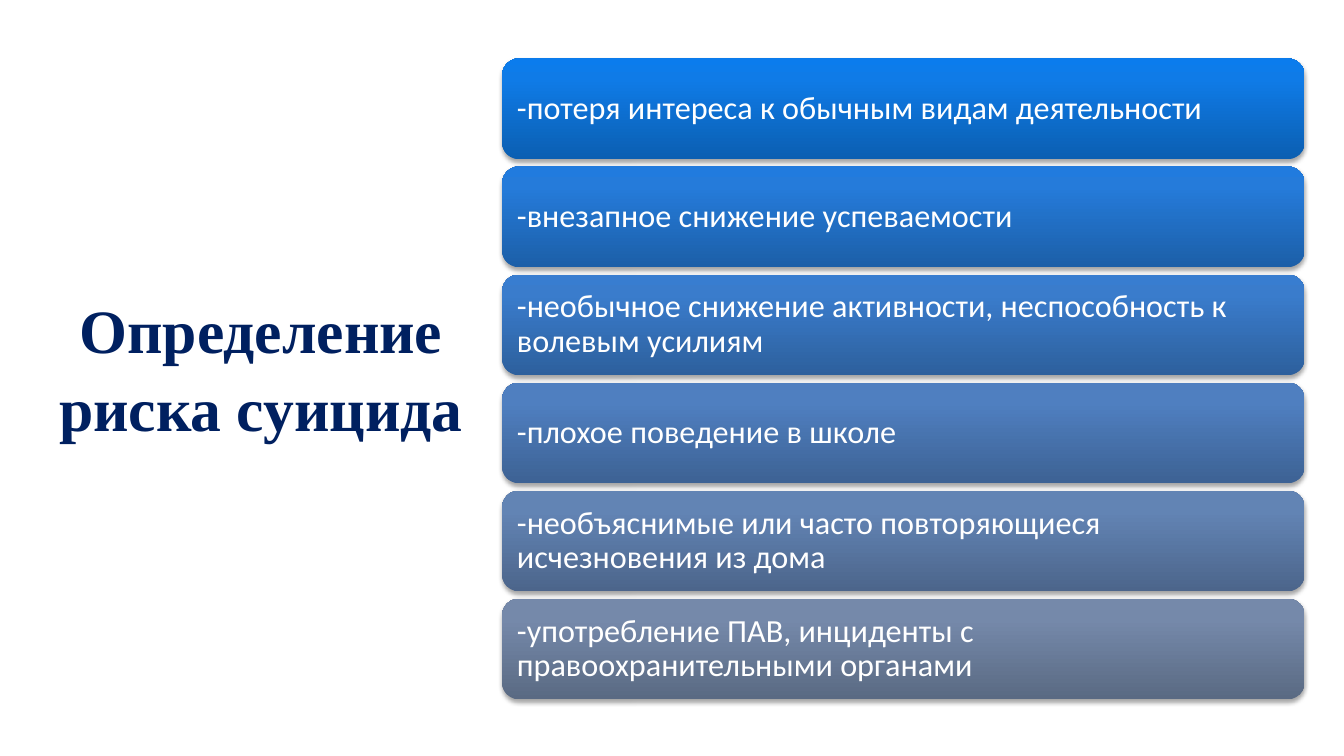
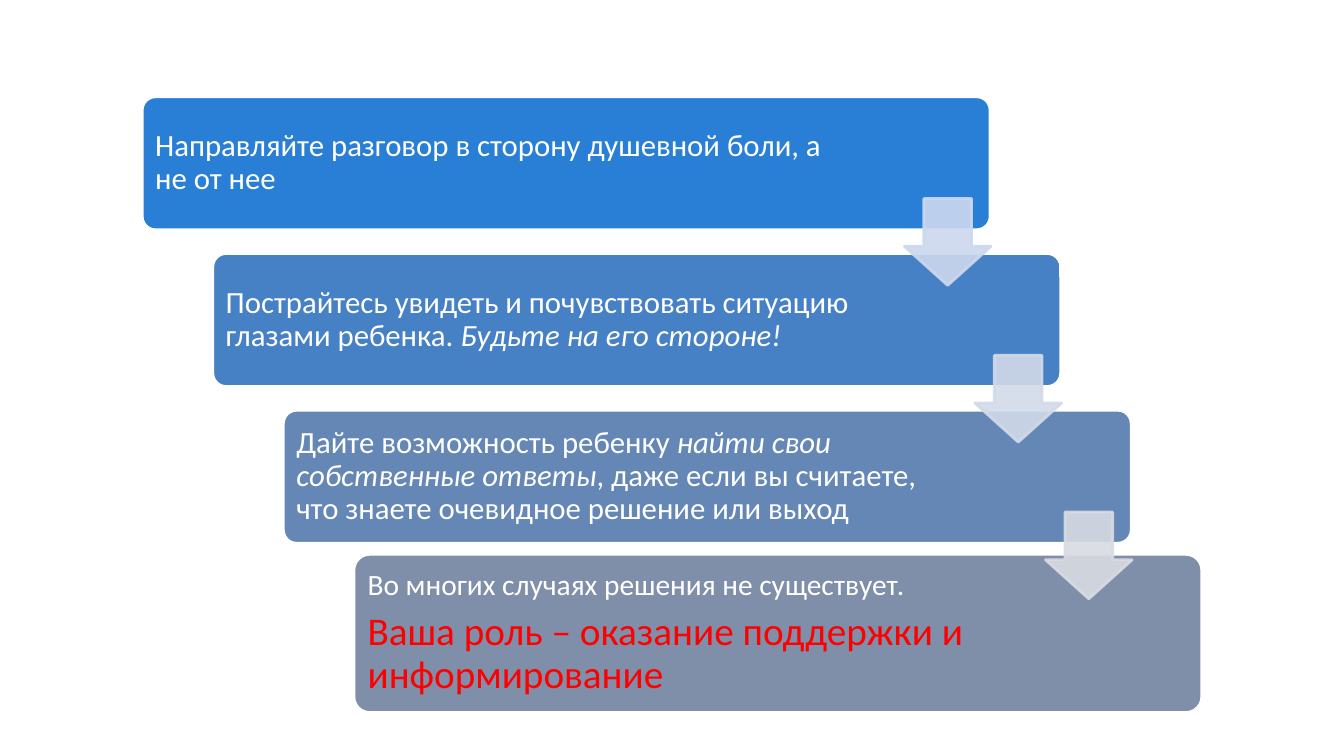
import dataclasses

import pptx
import pptx.dml.color
import pptx.enum.shapes
import pptx.enum.text
import pptx.oxml
import pptx.oxml.ns
import pptx.util

SHAPES = pptx.enum.shapes.MSO_SHAPE
ALIGN = pptx.enum.text.PP_ALIGN
qn = pptx.oxml.ns.qn


@dataclasses.dataclass(frozen=True)
class Theme:
    width: float = 13.33
    height: float = 7.5
    title_font: str = "Times New Roman"
    body_font: str = "Calibri"
    title_color: str = "002060"
    text_color: str = "FFFFFF"
    accent_color: str = "FF0000"
    title_size: int = 44
    sign_size: int = 23
    step_size: int = 22
    remark_size: int = 21
    accent_size: int = 28
    body_spacing: float = 0.9
    title_spacing: float = 1.06
    paragraph_gap: int = 7
    outline: int = 2
    arrow_alpha: int = 90
    sign_gradients: tuple = (
        ("0B5FB2", "0F7BE7", "0B7CED"),
        ("1C5FA8", "257BDA", "217BDE"),
        ("2D609D", "3A7CCC", "387DD0"),
        ("3D6294", "4F7FC0", "4D7FC3"),
        ("4C658B", "6284B4", "6184B7"),
        ("5A6A83", "7589AA", "748AAC"),
    )
    step_fills: tuple = ("297FD5", "4781C5", "6487B6", "7F8FA9")
    arrow_fills: tuple = ("CDD8EF", "D2DAE9", "D8DBE2")


def rgb(code):
    return pptx.dml.color.RGBColor.from_string(code)


def element(tag, parent, **attributes):
    """Append a DrawingML element and return it."""
    child = pptx.oxml.parse_xml(f"<a:{tag} {pptx.oxml.ns.nsdecls('a')}/>")
    for key, value in attributes.items():
        child.set(key, str(value))
    parent.append(child)
    return child


class Deck:
    """Style and current slide; places are percentages of the slide size."""

    def __init__(self, theme):
        self.theme = theme
        self.prs = pptx.Presentation()
        self.prs.slide_width = pptx.util.Inches(theme.width)
        self.prs.slide_height = pptx.util.Inches(theme.height)
        self.slide = None

    def new_slide(self):
        self.slide = self.prs.slides.add_slide(self.prs.slide_layouts[6])

    def place(self, left, top, width, height):
        across, down = self.prs.slide_width / 100, self.prs.slide_height / 100
        return [round(share * unit) for share, unit in
                zip((left, top, width, height), (across, down, across, down))]

    def style_runs(self, paragraph, font, size, color):
        for run in paragraph.runs:
            run.font.name = font
            run.font.size = pptx.util.Pt(size)
            run.font.color.rgb = rgb(color)

    def frame(self, shape, inset, right_inset=None):
        frame = shape.text_frame
        frame.word_wrap = True
        frame.vertical_anchor = pptx.enum.text.MSO_ANCHOR.MIDDLE
        frame.margin_left = frame.margin_top = frame.margin_bottom = pptx.util.Inches(inset)
        frame.margin_right = pptx.util.Inches(right_inset or inset)
        return frame

    def title(self, area, text):
        frame = self.frame(self.slide.shapes.add_textbox(*self.place(*area)), 0.1)
        frame.text = text
        paragraph = frame.paragraphs[0]
        paragraph.alignment = ALIGN.CENTER
        paragraph.line_spacing = self.theme.title_spacing
        self.style_runs(paragraph, self.theme.title_font, self.theme.title_size,
                        self.theme.title_color)
        paragraph.runs[0].font.bold = True

    def shape(self, preset, area, *adjustments):
        shape = self.slide.shapes.add_shape(preset, *self.place(*area))
        shape.shadow.inherit = False
        for index, value in enumerate(adjustments):
            shape.adjustments[index] = value
        return shape

    def solid(self, shape, color):
        shape.fill.solid()
        shape.fill.fore_color.rgb = rgb(color)

    def border(self, shape, color):
        shape.line.color.rgb = rgb(color)
        shape.line.width = pptx.util.Pt(self.theme.outline)

    def body_paragraph(self, paragraph, size, color):
        paragraph.alignment = ALIGN.LEFT
        paragraph.line_spacing = self.theme.body_spacing
        self.style_runs(paragraph, self.theme.body_font, size, color)

    def sign(self, area, text, gradient):
        """Glossy bar with a soft shadow below it."""
        bar = self.shape(SHAPES.ROUNDED_RECTANGLE, area)
        bar.line.fill.background()
        bar.fill.gradient()
        bar.fill.gradient_angle = 90
        properties = bar._element.spPr
        stops = properties.find(".//" + qn("a:gsLst"))
        stops.clear()
        for position, color in zip((0, 80, 100), gradient):
            element("srgbClr", element("gs", stops, pos=position * 1000), val=color)
        shadow = element("outerShdw", properties.find(qn("a:effectLst")),
                         blurRad=pptx.util.Pt(3.1), dist=pptx.util.Pt(1.8),
                         dir=90 * 60000, rotWithShape=0)
        element("alpha", element("srgbClr", shadow, val="000000"), val=35000)
        frame = self.frame(bar, 0.1)
        frame.text = text
        self.body_paragraph(frame.paragraphs[0], self.theme.sign_size, self.theme.text_color)

    def step(self, area, fill, paragraphs, arrow_room):
        """Flat box; each paragraph is (size, color, [(text, italic), ...])."""
        box = self.shape(SHAPES.ROUNDED_RECTANGLE, area, 0.1)
        self.solid(box, fill)
        self.border(box, self.theme.text_color)
        frame = self.frame(box, 0.09, arrow_room)
        for index, (size, color, pieces) in enumerate(paragraphs):
            paragraph = frame.add_paragraph() if index else frame.paragraphs[0]
            if index:
                paragraph.space_before = pptx.util.Pt(self.theme.paragraph_gap)
            for text, italic in pieces:
                run = paragraph.add_run()
                run.text = text
                run.font.italic = italic
            self.body_paragraph(paragraph, size, color)

    def arrow(self, area, color):
        arrow = self.shape(SHAPES.DOWN_ARROW, area, 0.45, 0.55)
        # Head length first, then shaft width, by adjustment name
        arrow.adjustments[0], arrow.adjustments[1] = 0.55, 0.45
        self.solid(arrow, color)
        self.border(arrow, color)
        for tint in list(arrow._element.spPr.iter(qn("a:srgbClr"))):
            element("alpha", tint, val=self.theme.arrow_alpha * 1000)


def risk_signs(deck):
    deck.new_slide()
    deck.title((3.45, 18.53, 31.96, 59.73), "Определение риска суицида")
    signs = (
        "-потеря интереса к обычным видам деятельности",
        "-внезапное снижение успеваемости",
        "-необычное снижение активности, неспособность к волевым усилиям",
        "-плохое поведение в школе",
        "-необъяснимые или часто повторяющиеся исчезновения из дома",
        "-употребление ПАВ, инциденты с правоохранительными органами",
    )
    for row, (text, gradient) in enumerate(zip(signs, deck.theme.sign_gradients)):
        deck.sign((37.36, 7.73 + row * 14.29, 59.71, 13.33), text, gradient)


def conversation_steps(deck):
    deck.new_slide()
    theme = deck.theme
    plain = (theme.step_size, theme.text_color)
    # Paragraphs, height of the box, room kept free on the right (inches)
    steps = (
        ([(*plain, [("Направляйте разговор в сторону душевной боли, а не от нее", False)])],
         17.6, 1.54),
        ([(*plain, [("Пострайтесь увидеть и почувствовать ситуацию глазами ребенка. ", False),
                    ("Будьте на его стороне!", True)])], 17.6, 1.64),
        ([(*plain, [("Дайте возможность ребенку ", False),
                    ("найти свои собственные ответы", True),
                    (", даже если вы считаете, что знаете очевидное решение или выход", False)])],
         17.6, 1.64),
        ([(theme.remark_size, theme.text_color,
           [("Во многих случаях решения не существует.", False)]),
          (theme.accent_size, theme.accent_color,
           [("Ваша роль – оказание поддержки и информирование", False)])], 20.93, 1.64),
    )
    # Staircase: every step is shifted right and down by the same amount
    left, middle, shift, drop = 10.58, 21.6, 5.25, 20.73
    for row, ((paragraphs, height, room), fill) in enumerate(zip(steps, theme.step_fills)):
        top = middle + row * drop - height / 2
        deck.step((left + row * shift, top, 63.09, height), fill, paragraphs, room)
    for row, color in enumerate(theme.arrow_fills):
        deck.arrow((67.29 + row * shift, 26.27 + row * drop, 6.45, 11.47), color)


def main():
    deck = Deck(Theme())
    risk_signs(deck)
    conversation_steps(deck)
    deck.prs.save("out.pptx")


if __name__ == "__main__":
    main()
